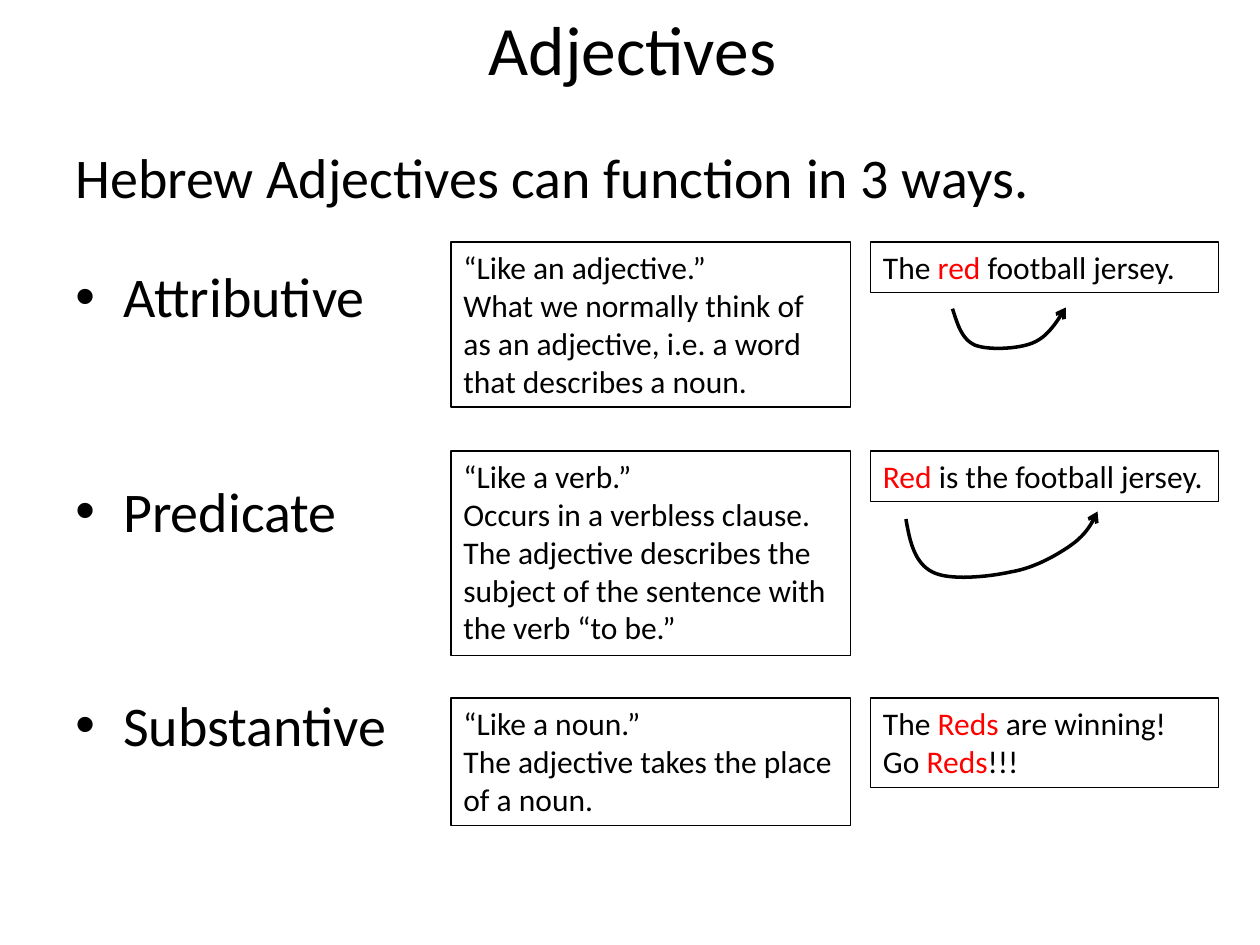
"""Build a slide on the three functions of Hebrew adjectives."""
from pptx import Presentation
from pptx.dml.color import RGBColor
from pptx.enum.text import MSO_ANCHOR as Anchor, PP_ALIGN as Align
from pptx.oxml.ns import qn
from pptx.util import Inches, Pt
from lxml.etree import SubElement

BLACK, RED = "000000", "FF0000"
MEANING_LEFT, MEANING_WIDTH = 3.58, 3.17
EXAMPLE_LEFT, EXAMPLE_WIDTH = 6.91, 2.76
FUNCTIONS = [
    ("Attributive", 1.92, 1.31, 0.4,
     ["“Like an adjective.”",
      "What we normally think of as an adjective, i.e. a word that describes a noun."],
     ["The *red* football jersey."]),
    ("Predicate", 3.58, 1.62, 0.4,
     ["“Like a verb.”",
      "Occurs in a verbless clause. The adjective describes the subject of the "
      "sentence with the verb “to be.”"],
     ["*Red* is the football jersey."]),
    ("Substantive", 5.54, 1.01, 0.71,
     ["“Like a noun.”", "The adjective takes the place of a noun."],
     ["The *Reds* are winning!", "Go *Reds*!!!"]),
]
ATTRIBUTIVE_CURVE = [
    (7.56, 2.45), (7.6, 2.57), (7.63, 2.69), (7.74, 2.74), (7.85, 2.78),
    (8.08, 2.77), (8.2, 2.72), (8.32, 2.67), (8.39, 2.55), (8.46, 2.44)]
PREDICATE_CURVE = [
    (7.19, 4.12), (7.22, 4.3), (7.26, 4.47), (7.4, 4.54), (7.53, 4.61),
    (7.84, 4.58), (8.02, 4.54), (8.21, 4.51), (8.4, 4.4), (8.51, 4.32),
    (8.62, 4.24), (8.67, 4.15), (8.71, 4.06)]


def color(hex_code):
    """Turn a hex string into a colour."""
    return RGBColor.from_string(hex_code)


def outline(line, width):
    """Give a line its black colour and its width in points."""
    line.color.rgb = color(BLACK)
    line.width = Pt(width)


def write(paragraph, text, size=18, align=Align.LEFT, before=0, after=0, bullet=False):
    """Write text into a paragraph, with the parts between asterisks in red."""
    paragraph.alignment = align
    paragraph.space_before, paragraph.space_after = Pt(before), Pt(after)
    if bullet:
        properties = paragraph._p.get_or_add_pPr()
        properties.set("marL", str(Inches(0.38)))
        properties.set("indent", str(-Inches(0.38)))
        SubElement(properties, qn("a:buFont"), typeface="Arial")
        SubElement(properties, qn("a:buChar"), char="•")
    for index, part in enumerate(text.split("*")):
        if part:
            run = paragraph.add_run()
            run.text = part
            run.font.name, run.font.size = "Calibri", Pt(size)
            run.font.color.rgb = color(RED if index % 2 else BLACK)


def add_text(slide, left, top, width, height, lines, anchor=Anchor.TOP, border=False):
    """Add a text box whose lines are pairs of text and format."""
    box = slide.shapes.add_textbox(
        Inches(left), Inches(top), Inches(width), Inches(height))
    frame = box.text_frame
    frame.word_wrap = True
    frame.vertical_anchor = anchor
    for index, (text, style) in enumerate(lines):
        paragraph = frame.add_paragraph() if index else frame.paragraphs[0]
        write(paragraph, text, **style)
    if border:
        outline(box.line, 0.75)


def bezier(knots, steps=16):
    """Return the points along a chain of cubic curves."""
    points = [knots[0]]
    for first in range(0, len(knots) - 1, 3):
        for step in range(1, steps + 1):
            t = step / steps
            weights = ((1 - t) ** 3, 3 * t * (1 - t) ** 2, 3 * t * t * (1 - t), t ** 3)
            segment = knots[first:first + 4]
            points.append(tuple(
                sum(w * knot[axis] for w, knot in zip(weights, segment))
                for axis in (0, 1)))
    return points


def add_curved_arrow(slide, knots):
    """Draw an open curve from adjective to noun with an arrowhead at its end."""
    start, *rest = [(Inches(x), Inches(y)) for x, y in bezier(knots)]
    builder = slide.shapes.build_freeform(*start)
    builder.add_line_segments(rest, close=False)
    arrow = builder.convert_to_shape()
    arrow.shadow.inherit = False
    arrow.fill.background()
    outline(arrow.line, 2)
    SubElement(arrow.line._get_or_add_ln(), qn("a:tailEnd"), type="arrow")


def main():
    """Build and save the slide."""
    deck = Presentation()
    deck.slide_width, deck.slide_height = Inches(10), Inches(7.5)
    slide = deck.slides.add_slide(deck.slide_layouts[6])

    add_text(slide, 0.52, 0, 9, 0.75,
             [("Adjectives", dict(size=39.6, align=Align.CENTER))], Anchor.MIDDLE)
    heading = ("Hebrew Adjectives can function in 3 ways.",
               dict(size=32, before=6, after=24))
    names = [(name, dict(size=32, before=6, after=78, bullet=True))
             for name, *_ in FUNCTIONS]
    add_text(slide, 0.5, 1.08, 9, 6, [heading, *names])

    for _, top, meaning_height, example_height, meaning, example in FUNCTIONS:
        for left, width, height, lines in (
                (MEANING_LEFT, MEANING_WIDTH, meaning_height, meaning),
                (EXAMPLE_LEFT, EXAMPLE_WIDTH, example_height, example)):
            add_text(slide, left, top, width, height,
                     [(line, {}) for line in lines], border=True)
    for knots in (ATTRIBUTIVE_CURVE, PREDICATE_CURVE):
        add_curved_arrow(slide, knots)
    deck.save("out.pptx")


if __name__ == "__main__":
    main()
